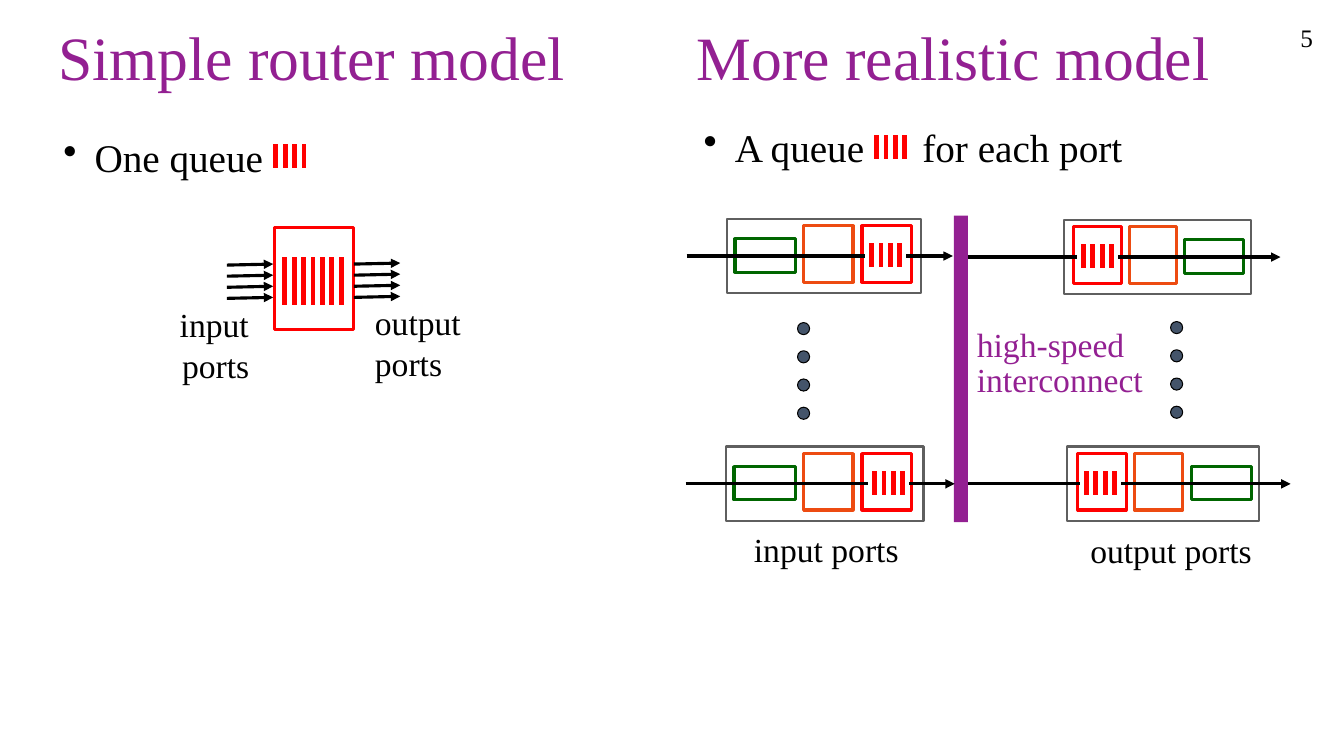
"""Build a slide that compares a simple router with a more realistic one."""
from dataclasses import dataclass

from lxml.etree import SubElement
from pptx import Presentation
from pptx.dml.color import RGBColor
from pptx.enum.shapes import MSO_CONNECTOR, MSO_SHAPE
from pptx.enum.text import MSO_ANCHOR, PP_ALIGN
from pptx.oxml.ns import qn
from pptx.util import Inches, Pt

FONT = "Times New Roman"
BLACK, WHITE, RED, PURPLE = "000000", "FFFFFF", "FF0000", "932092"
GRAY, GREEN, ORANGE, SLATE = "5F5F5F", "006600", "ED4B11", "44546A"
LEFT, RIGHT, MID = PP_ALIGN.LEFT, PP_ALIGN.RIGHT, PP_ALIGN.CENTER
STEP = 0.28 / 3


@dataclass
class Lane:
    """One port: its frame, its three cells as (left, width), and its wire."""
    left: float
    top: float
    width: float
    green: tuple[float, float]
    orange: tuple[float, float]
    red: tuple[float, float]
    start: float
    end: float
    queue: float


@dataclass
class Label:
    """A block of text, with one alignment for each line."""
    box: tuple[float, float, float, float]
    lines: list[str]
    aligns: list[PP_ALIGN]
    size: int = 24
    color: str = BLACK
    space: float = 1.0
    wrap: bool = True
    anchor: MSO_ANCHOR = MSO_ANCHOR.TOP
    bullet: bool = False
    tab: float = 0


OUTPUTS = [
    Lane(10.55, 2.18, 1.86, (11.75, 0.58), (11.2, 0.47), (10.65, 0.47), 9.53, 12.7, 10.7),
    Lane(10.58, 4.43, 1.91, (11.82, 0.59), (11.25, 0.48), (10.69, 0.48), 9.53, 12.8, 10.73),
]
INPUTS = [
    Lane(7.21, 2.17, 1.93, (7.29, 0.6), (7.97, 0.49), (8.55, 0.49), 6.81, 9.45, 8.6),
    Lane(7.2, 4.43, 1.96, (7.28, 0.61), (7.97, 0.49), (8.55, 0.49), 6.8, 9.47, 8.63),
]
LABELS = [
    Label((12.46, 0.17, 0.66, 0.4), ["5"], [RIGHT], 18),
    Label((0.48, 0.12, 5.26, 0.97), ["Simple router model"], [LEFT], 44, PURPLE, 0.9,
          anchor=MSO_ANCHOR.MIDDLE),
    Label((6.81, 0.12, 5.89, 0.97), ["More realistic model"], [LEFT], 44, PURPLE, 0.9,
          anchor=MSO_ANCHOR.MIDDLE),
    Label((0.53, 1.27, 5.44, 0.57), ["One queue"], [LEFT], 28, bullet=True),
    Label((6.88, 1.17, 5.44, 0.57), ["A queue\tfor each port"], [LEFT], 28, bullet=True, tab=2.17),
    Label((9.59, 3.23, 1.93, 0.8), ["high-speed", "interconnect"], [LEFT, LEFT], 24, PURPLE, 0.85),
    Label((7.37, 5.2, 1.65, 0.5), ["input ports"], [MID], wrap=False),
    Label((10.21, 5.21, 2.81, 0.5), ["output ports"], [MID]),
    Label((1.68, 2.97, 0.89, 0.91), ["input", "ports"], [MID, RIGHT], wrap=False),
    Label((3.62, 2.95, 1.07, 0.91), ["output", "ports"], [LEFT, LEFT], wrap=False),
]

deck = Presentation()
deck.slide_width, deck.slide_height = Inches(13.33), Inches(7.5)
slide = deck.slides.add_slide(deck.slide_layouts[6])


def paint(color: str) -> RGBColor:
    """Turn a hex string into a colour."""
    return RGBColor.from_string(color)


def block(left: float, top: float, width: float, height: float, fill: str = WHITE,
          edge: str = "", weight: float = 2.25, kind: MSO_SHAPE = MSO_SHAPE.RECTANGLE) -> None:
    """Draw a filled shape, with an outline if an edge colour is given."""
    shape = slide.shapes.add_shape(kind, *map(Inches, (left, top, width, height)))
    shape.shadow.inherit = False
    shape.fill.solid()
    shape.fill.fore_color.rgb = paint(fill)
    if edge:
        shape.line.color.rgb = paint(edge)
        shape.line.width = Pt(weight)
    else:
        shape.line.fill.background()


def arrow(start: float, end: float, top: float, rise: float = 0) -> None:
    """Draw a black arrow from left to right."""
    wire = slide.shapes.add_connector(
        MSO_CONNECTOR.STRAIGHT, *map(Inches, (start, top, end, top - rise)))
    wire.line.color.rgb = paint(BLACK)
    wire.line.width = Pt(2.25)
    SubElement(wire.line._get_or_add_ln(), qn("a:tailEnd"), type="triangle")
    SubElement(wire._element.spPr, qn("a:effectLst"))


def queue(left: float, top: float, count: int = 4, height: float = 0.28) -> None:
    """Draw a row of red bars."""
    for i in range(count):
        block(left + i * STEP, top, 0.09, height, RED, WHITE, 3)


def port(lane: Lane) -> None:
    """Draw the frame, the cells and the wire of a lane."""
    block(lane.left, lane.top, lane.width, 0.74, edge=GRAY, weight=1.5)
    for (left, width), drop, height, color in (
            (lane.green, 0.2, 0.33, GREEN),
            (lane.orange, 0.07, 0.56, ORANGE),
            (lane.red, 0.07, 0.56, RED)):
        block(left, lane.top + drop, width, height, edge=color)
    arrow(lane.start, lane.end, lane.top + 0.37)
    queue(lane.queue, lane.top + 0.22)


def dots(left: float, top: float) -> None:
    """Draw four dots in a column."""
    for i in range(4):
        block(left, top + i * 0.28, 0.12, 0.12, SLATE, BLACK, 0.75, MSO_SHAPE.OVAL)


def write(label: Label) -> None:
    """Add a text box."""
    frame = slide.shapes.add_textbox(*map(Inches, label.box)).text_frame
    frame.word_wrap = label.wrap
    frame.vertical_anchor = label.anchor
    frame.text = "\n".join(label.lines)
    for para, align in zip(frame.paragraphs, label.aligns):
        para.alignment = align
        para.line_spacing = label.space
        props = para._p.get_or_add_pPr()
        if label.bullet:
            props.set("marL", str(Inches(0.31)))
            props.set("indent", str(-Inches(0.31)))
            SubElement(props, qn("a:buChar"), char="•")
        if label.tab:
            stops = SubElement(props, qn("a:tabLst"))
            SubElement(stops, qn("a:tab"), pos=str(Inches(label.tab)), algn="l")
        para.font.name = FONT
        para.font.size = Pt(label.size)
        para.font.color.rgb = paint(label.color)


def main() -> None:
    """Draw both models and save the deck."""
    for lane in OUTPUTS:
        port(lane)
    block(9.46, 2.14, 0.14, 3.04, PURPLE)
    for lane in INPUTS:
        port(lane)
    dots(11.61, 3.19)
    dots(7.91, 3.2)

    block(2.72, 2.26, 0.79, 1.01, edge=RED)
    queue(2.78, 2.53, 7, 0.52)
    for start, top in ((2.25, 2.63), (3.51, 2.62)):
        for i in range(4):
            arrow(start, start + 0.46, top + i * 0.11, 0.01)

    for label in LABELS:
        write(label)
    queue(2.69, 1.41)
    queue(8.65, 1.32)
    deck.save("out.pptx")


if __name__ == "__main__":
    main()
